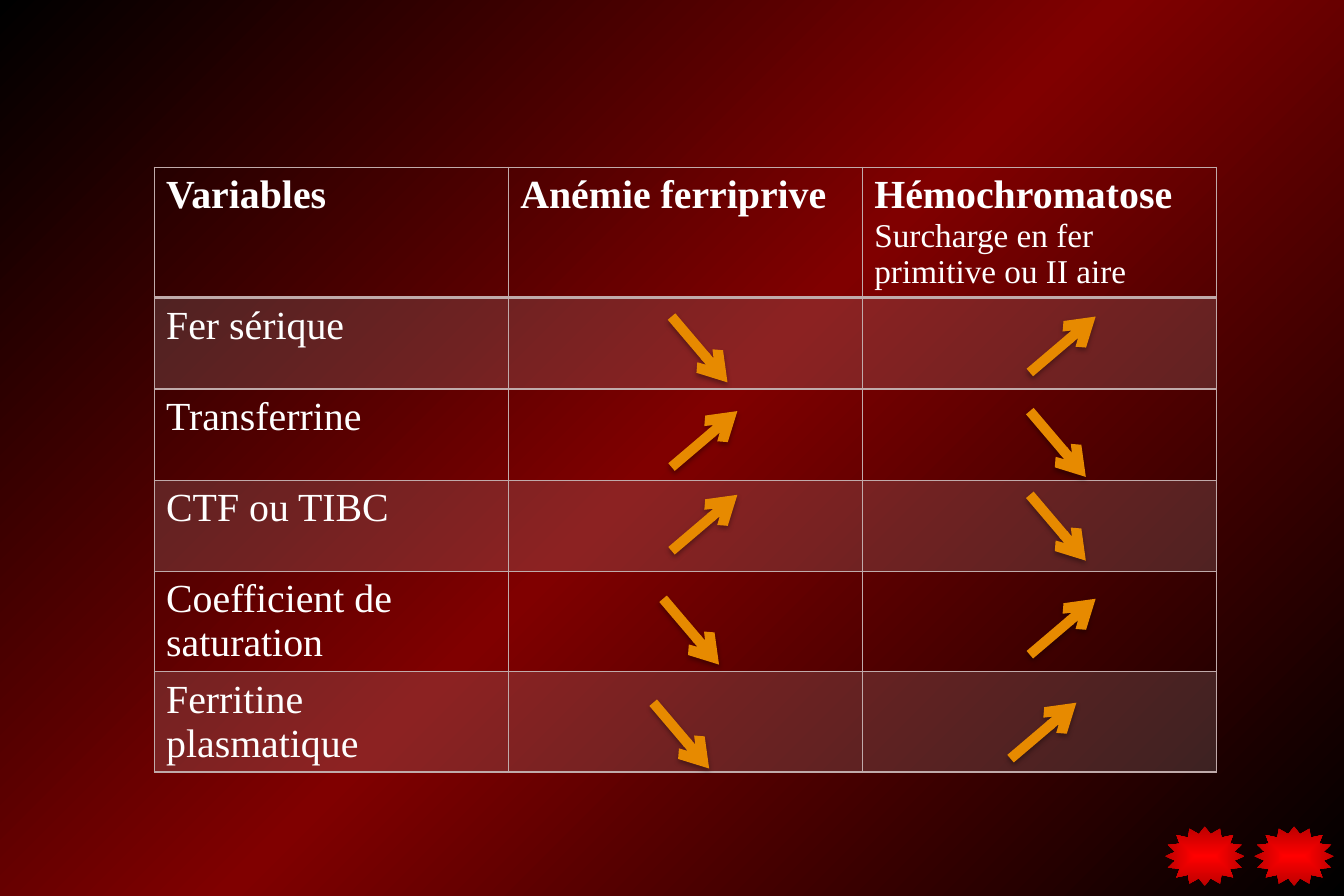
"""Build a slide comparing iron variables in two conditions."""
from dataclasses import dataclass

from lxml import etree
from pptx import Presentation
from pptx.dml.color import RGBColor
from pptx.enum.shapes import MSO_CONNECTOR, MSO_SHAPE
from pptx.oxml import parse_xml
from pptx.oxml.ns import nsdecls, qn
from pptx.util import Cm, Pt

STAR = MSO_SHAPE.STAR_16_POINT
STRAIGHT = MSO_CONNECTOR.STRAIGHT


@dataclass(frozen=True)
class Theme:
    font: str = "Times New Roman"
    text: str = "FFFFFF"
    border: str = "C0AAAA"
    arrow: str = "E78A00"
    shadow: str = "000000"
    backdrop: tuple = ((0, "000000"), (50, "800000"), (100, "000000"))
    star: tuple = ((0, "FF0000"), (100, "BC0000"))
    body: int = 24
    note: int = 20


theme = Theme()


def set_gradient(parent, stops, direction):
    """Replace the solid fill of an element with a gradient."""
    gs = "".join(f'<a:gs pos="{pos * 1000}"><a:srgbClr val="{color}"/></a:gs>'
                 for pos, color in stops)
    grad = parse_xml(f'<a:gradFill {nsdecls("a")} rotWithShape="1">'
                     f'<a:gsLst>{gs}</a:gsLst>{direction}</a:gradFill>')
    parent.replace(parent.find(qn("a:solidFill")), grad)


def add_text(p, text, **changes):
    """Add a run in the theme font, with any changed font values."""
    r = p.add_run()
    r.text = text
    formats = {"name": theme.font, "size": Pt(theme.body), "bold": False}
    for name, value in (formats | changes).items():
        setattr(r.font, name, value)
    r.font.color.rgb = RGBColor.from_string(theme.text)


prs = Presentation()
prs.slide_width, prs.slide_height = Cm(28.58), Cm(19.05)
s = prs.slides.add_slide(prs.slide_layouts[6])

s.background.fill.solid()
set_gradient(s._element.find(".//" + qn("p:bgPr")), theme.backdrop,
             '<a:lin ang="2700000" scaled="0"/>')

for left in (26.67, 24.77):
    sp = s.shapes.add_shape(STAR, Cm(left), Cm(17.57), Cm(1.7), Cm(1.27))
    sp.shadow.inherit = False
    sp.line.fill.background()
    sp.fill.solid()
    set_gradient(sp._element.spPr, theme.star,
                 '<a:path path="shape"><a:fillToRect l="50000" t="50000" '
                 'r="50000" b="50000"/></a:path>')

headers = ("Variables", "Anémie ferriprive", "Hémochromatose")
variables = ("Fer sérique", "Transferrine", "CTF ou TIBC",
             "Coefficient de saturation", "Ferritine plasmatique")
row_heights = (2.77, 1.94, 1.94, 1.94, 2.13, 2.13)
col_width = 7.53

table = s.shapes.add_table(
    len(row_heights), len(headers), Cm(3.28), Cm(3.56),
    Cm(col_width * len(headers)), Cm(sum(row_heights))).table
table.first_row = table.horz_banding = False
for col in table.columns:
    col.width = Cm(col_width)
for row, height in zip(table.rows, row_heights):
    row.height = Cm(height)

for i, row in enumerate(table.rows):
    for cell in row.cells:
        tc_pr = cell._tc.get_or_add_tcPr()
        if i % 2:
            cell.fill.solid()
            cell.fill.fore_color.rgb = RGBColor.from_string(theme.border)
            color = tc_pr.find(".//" + qn("a:srgbClr"))
            etree.SubElement(color, qn("a:alpha"), val="20000")
        else:
            cell.fill.background()
        for k, side in enumerate("LRTB"):
            thick = (i, side) in ((0, "B"), (1, "T"))
            tc_pr.insert(k, parse_xml(
                f'<a:ln{side} {nsdecls("a")} w="{Pt(2 if thick else 1)}">'
                f'<a:solidFill><a:srgbClr val="{theme.border}"/></a:solidFill>'
                f'</a:ln{side}>'))

for j, text in enumerate(headers):
    add_text(table.cell(0, j).text_frame.paragraphs[0], text, bold=True)
add_text(table.cell(0, 2).text_frame.add_paragraph(),
         "Surcharge en fer primitive ou II aire", size=Pt(theme.note))
for i, text in enumerate(variables, start=1):
    add_text(table.cell(i, 0).text_frame.paragraphs[0], text)

short, long = 1.19, 1.4
arrow_rows = (
    (6.73, (14.28, "down"), (21.9, "up")),
    (8.74, (14.28, "up"), (21.9, "down")),
    (10.52, (14.28, "up"), (21.9, "down")),
    (12.73, (14.1, "down"), (21.9, "up")),
    (14.94, (13.89, "down"), (21.49, "up")),
)
for top, *arrows in arrow_rows:
    for x, trend in arrows:
        if trend == "down":
            ends = (x, top, x + short, top + long)
        else:
            ends = (x, top + short, x + long, top)
        arrow = s.shapes.add_connector(STRAIGHT, *map(Cm, ends))
        arrow.line.width = Pt(6)
        arrow.line.color.rgb = RGBColor.from_string(theme.arrow)
        etree.SubElement(arrow.line._get_or_add_ln(), qn("a:tailEnd"), type="arrow")
        arrow._element.spPr.append(parse_xml(
            f'<a:effectLst {nsdecls("a")}><a:outerShdw blurRad="{Pt(3.1)}" '
            f'dist="{Pt(1.8)}" dir="5400000" rotWithShape="0">'
            f'<a:srgbClr val="{theme.shadow}"><a:alpha val="35000"/></a:srgbClr>'
            f'</a:outerShdw></a:effectLst>'))

prs.save("out.pptx")
